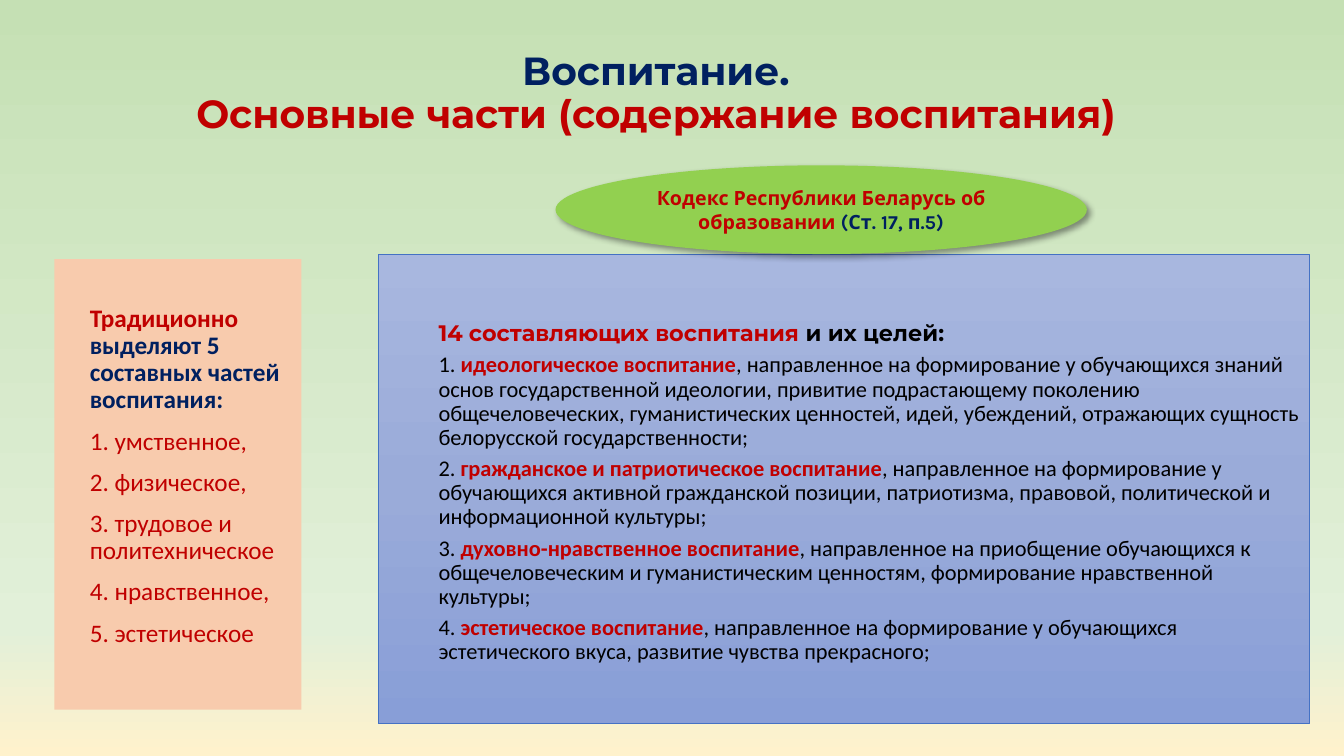
from dataclasses import dataclass

from pptx import Presentation
from pptx.dml.color import RGBColor
from pptx.enum.shapes import MSO_SHAPE
from pptx.enum.text import MSO_ANCHOR, PP_ALIGN
from pptx.oxml import parse_xml
from pptx.oxml.ns import nsdecls, qn
from pptx.util import Inches, Pt

RED, NAVY, BLACK = "C00000", "002060", "000000"


@dataclass
class Goal:
    name: str
    aim: str


PARTS = ["умственное,", "физическое,", "трудовое и политехническое",
         "нравственное,", "эстетическое"]

GOALS = [
    Goal("идеологическое воспитание",
         ", направленное на формирование у обучающихся знаний основ "
         "государственной идеологии, привитие подрастающему поколению "
         "общечеловеческих, гуманистических ценностей, идей, убеждений, "
         "отражающих сущность белорусской государственности;"),
    Goal("гражданское и патриотическое воспитание",
         ", направленное на формирование у обучающихся активной гражданской "
         "позиции, патриотизма, правовой, политической и информационной культуры;"),
    Goal("духовно-нравственное воспитание",
         ", направленное на приобщение обучающихся к общечеловеческим "
         "и гуманистическим ценностям, формирование нравственной культуры;"),
    Goal("эстетическое воспитание",
         ", направленное на формирование у обучающихся эстетического вкуса, "
         "развитие чувства прекрасного;"),
]


def rgb(color: str) -> RGBColor:
    return RGBColor.from_string(color)


def add_text(p, text: str, *, size: float, color: str = BLACK,
             font: str = "Calibri", bold: bool = False) -> None:
    r = p.add_run()
    r.text = text
    r.font.size, r.font.name, r.font.bold = Pt(size), font, bold
    r.font.color.rgb = rgb(color)


def add_paragraph(tf, *, before: float = 0, line: float = 0.9, align=PP_ALIGN.LEFT):
    """Use the empty first paragraph if there is one, else append another."""
    p = tf.paragraphs[0]
    if p.runs:
        p = tf.add_paragraph()
    p.space_before, p.line_spacing, p.alignment = Pt(before), line, align
    return p


def set_gradient(fill, element, stops: list[tuple[int, str]]) -> None:
    """Run the colour stops from top to bottom."""
    fill.gradient()
    fill.gradient_angle = 270
    gs_list = next(element.iter(qn("a:gsLst")))
    for gs in list(gs_list):
        gs_list.remove(gs)
    for pos, color in stops:
        gs_list.append(parse_xml(
            f'<a:gs {nsdecls("a")} pos="{pos * 1000}"><a:srgbClr val="{color}"/></a:gs>'))


def add_panel(s, kind, left: float, top: float, width: float, height: float):
    sp = s.shapes.add_shape(kind, Inches(left), Inches(top), Inches(width), Inches(height))
    sp.shadow.inherit = False
    sp.line.fill.background()
    sp.text_frame.word_wrap = True
    sp.text_frame.vertical_anchor = MSO_ANCHOR.TOP
    return sp


def add_title(s) -> None:
    sp = s.shapes.add_textbox(Inches(0.35), Inches(0.42), Inches(12.42), Inches(1.03))
    tf = sp.text_frame
    tf.word_wrap, tf.vertical_anchor = True, MSO_ANCHOR.MIDDLE
    p = add_paragraph(tf, align=PP_ALIGN.CENTER)
    add_text(p, "Воспитание. ", size=28, color=NAVY, font="Montserrat", bold=True)
    p.add_line_break()
    add_text(p, "Основные части (содержание воспитания) ", size=28, color=RED,
             font="Montserrat", bold=True)


def add_traditional_parts(s) -> None:
    sp = add_panel(s, MSO_SHAPE.RECTANGLE, 0.54, 2.57, 2.45, 4.47)
    sp.fill.solid()
    sp.fill.fore_color.rgb = rgb("F8CBAD")
    tf = sp.text_frame
    tf.margin_left, tf.margin_top = Inches(0.35), Inches(0.46)
    p = add_paragraph(tf)
    add_text(p, "Традиционно ", size=18, color=RED, bold=True)
    add_text(p, "выделяют 5 составных частей воспитания:", size=18, color=NAVY, bold=True)
    for number, part in enumerate(PARTS, 1):
        add_text(add_paragraph(tf, before=10), f"{number}. {part}", size=18, color=RED)


def add_code_goals(s) -> None:
    sp = add_panel(s, MSO_SHAPE.RECTANGLE, 3.75, 2.52, 9.24, 4.66)
    set_gradient(sp.fill, sp._element, [(0, "A8B7DF"), (50, "9AABD9"), (100, "889ED7")])
    sp.line.color.rgb = rgb("4472C4")
    sp.line.width = Pt(0.5)
    tf = sp.text_frame
    tf.margin_left, tf.margin_top = Inches(0.6), Inches(0.68)
    p = add_paragraph(tf)
    add_text(p, "14 составляющих воспитания", size=16, color=RED, font="Montserrat", bold=True)
    add_text(p, " и их целей:", size=16, font="Montserrat", bold=True)
    for number, goal in enumerate(GOALS, 1):
        p = add_paragraph(tf, before=5)
        add_text(p, f"{number}. ", size=16)
        add_text(p, goal.name, size=16, color=RED, bold=True)
        add_text(p, goal.aim, size=16)


def add_code_reference(s) -> None:
    sp = add_panel(s, MSO_SHAPE.OVAL, 5.51, 1.64, 5.27, 0.88)
    sp.fill.solid()
    sp.fill.fore_color.rgb = rgb("92D050")
    sp._element.spPr.find(qn("a:effectLst")).append(parse_xml(
        f'<a:outerShdw {nsdecls("a")} blurRad="{Pt(4)}" dist="{Pt(3)}" dir="2700000">'
        '<a:srgbClr val="000000"><a:alpha val="40000"/></a:srgbClr></a:outerShdw>'))
    tf = sp.text_frame
    tf.vertical_anchor = MSO_ANCHOR.MIDDLE
    p = add_paragraph(tf, line=1.0, align=PP_ALIGN.CENTER)
    add_text(p, "Кодекс Республики Беларусь об образовании ", size=14, color=RED,
             font="Karla", bold=True)
    add_text(p, "(Ст. 17, п.5)", size=14, color=NAVY, font="Karla", bold=True)


def main() -> None:
    prs = Presentation()
    prs.slide_width, prs.slide_height = Inches(13.33), Inches(7.5)
    s = prs.slides.add_slide(prs.slide_layouts[6])
    set_gradient(s.background.fill, s._element,
                 [(0, "C5E0B4"), (83, "E2F0D9"), (100, "FFF2CC")])
    add_title(s)
    add_traditional_parts(s)
    add_code_goals(s)
    add_code_reference(s)
    prs.save("out.pptx")


if __name__ == "__main__":
    main()
